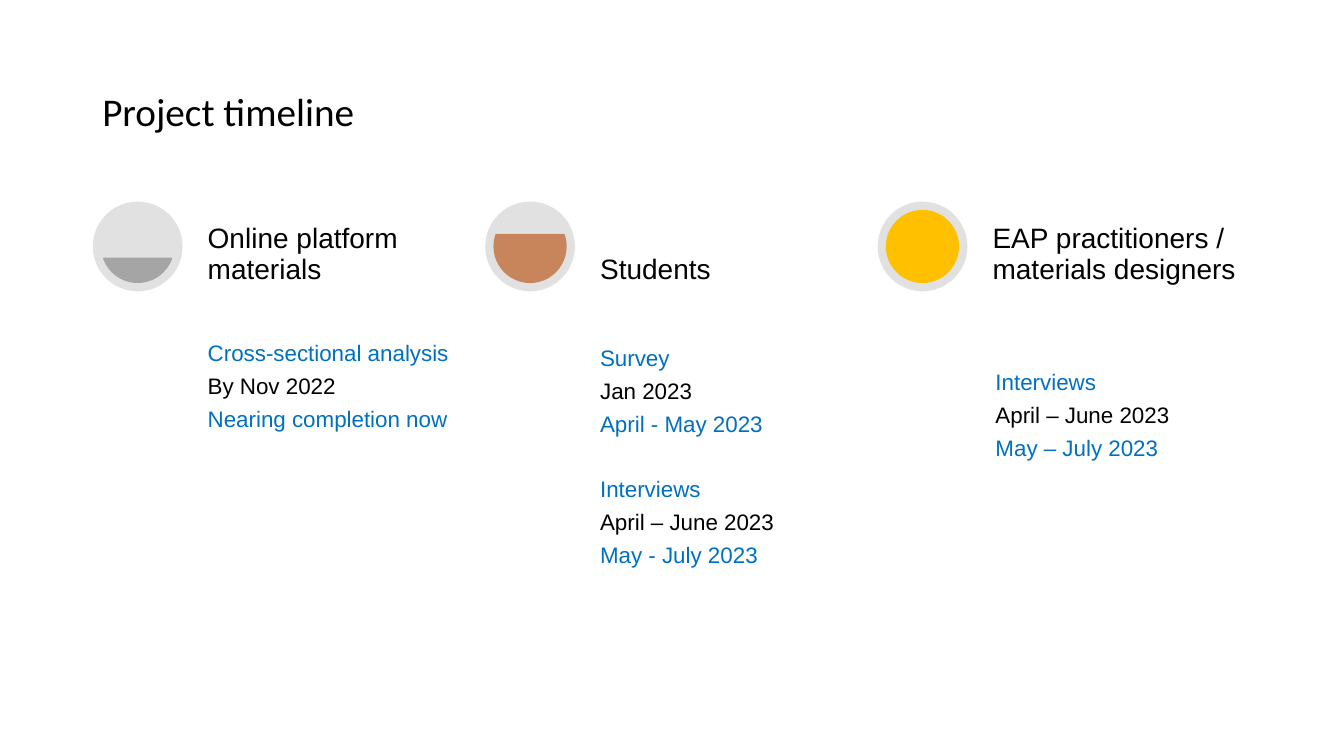
"""Build the project timeline slide."""
import dataclasses

import pptx
import pptx.dml.color
import pptx.enum.shapes
import pptx.enum.text
import pptx.slide
import pptx.text.text
import pptx.util

Pt = pptx.util.Pt
Anchor = pptx.enum.text.MSO_ANCHOR
Shape = pptx.enum.shapes.MSO_SHAPE


@dataclasses.dataclass(frozen=True)
class Theme:
    title_font: str = "Calibri"
    body_font: str = "Arial"
    title_size: float = 28
    heading_size: float = 20
    entry_size: float = 16
    text: str = "000000"
    accent: str = "0070C0"
    ring: str = "E1E1E1"
    low: str = "A5A5A5"
    middle: str = "C8855C"
    full: str = "FFC000"


@dataclasses.dataclass(frozen=True)
class Box:
    left: float
    top: float
    width: float
    height: float

    def lengths(self) -> tuple[pptx.util.Length, ...]:
        return tuple(Pt(value) for value in dataclasses.astuple(self))


@dataclasses.dataclass(frozen=True)
class Activity:
    name: str
    planned: str
    revised: str


@dataclasses.dataclass(frozen=True)
class Stage:
    heading: str
    fill: str
    chord_angles: tuple[float, float]
    activities: tuple[Activity, ...]
    inset: float
    top_inset: float


THEME = Theme()
STAGES = (
    Stage("Online platform materials", THEME.low, (11.68, 96.32),
          (Activity("Cross-sectional analysis", "By Nov 2022", "Nearing completion now"),),
          4.4, 36.5),
    Stage("Students", THEME.middle, (204.32, 119.68),
          (Activity("Survey", "Jan 2023", "April - May 2023"),
           Activity("Interviews", "April – June 2023", "May - July 2023")),
          4.4, 40),
    Stage("EAP practitioners / materials designers", THEME.full, (162, 162),
          (Activity("Interviews", "April – June 2023", "May – July 2023"),),
          6.5, 57),
)
FIRST_LEFT, STAGE_PITCH = 66.3, 280.3
ROW_TOP, RING_SIZE, CHORD_INSET = 144, 64.1, 6.4
TEXT_OFFSET, TEXT_WIDTH, ENTRIES_HEIGHT = 77.7, 189.4, 269.3
ENTRY_GAP, ACTIVITY_GAP = 6.3, 29.1


def rgb(color: str) -> pptx.dml.color.RGBColor:
    return pptx.dml.color.RGBColor.from_string(color)


def add_text(slide: pptx.slide.Slide, box: Box, text: str, font: str, size: float,
             anchor: Anchor, inset: float) -> pptx.text.text.TextFrame:
    text_frame = slide.shapes.add_textbox(*box.lengths()).text_frame
    text_frame.word_wrap = True
    text_frame.vertical_anchor = anchor
    text_frame.margin_left = text_frame.margin_right = Pt(inset)
    text_frame.margin_top = text_frame.margin_bottom = Pt(inset)
    text_frame.text = text
    for paragraph in text_frame.paragraphs:
        paragraph.line_spacing = 0.9
        for run in paragraph.runs:
            run.font.name = font
            run.font.size = Pt(size)
            run.font.color.rgb = rgb(THEME.text)
    return text_frame


def add_disc(slide: pptx.slide.Slide, kind: Shape, box: Box, color: str,
             angles: tuple[float, ...] = ()) -> None:
    shape = slide.shapes.add_shape(kind, *box.lengths())
    shape.shadow.inherit = False
    shape.fill.solid()
    shape.fill.fore_color.rgb = rgb(color)
    if angles:
        shape.line.color.rgb = rgb(color)
        shape.line.width = Pt(1)
    else:
        shape.line.fill.background()
    for index, angle in enumerate(angles):
        shape.adjustments[index] = angle


def add_entries(slide: pptx.slide.Slide, stage: Stage, left: float) -> None:
    lines = [line for activity in stage.activities for line in dataclasses.astuple(activity)]
    box = Box(left, ROW_TOP + RING_SIZE, TEXT_WIDTH, ENTRIES_HEIGHT)
    text_frame = add_text(slide, box, "\n".join(lines), THEME.body_font,
                          THEME.entry_size, Anchor.TOP, stage.inset)
    text_frame.margin_top = Pt(stage.top_inset)
    for index, paragraph in enumerate(text_frame.paragraphs):
        position = index % 3
        paragraph.space_after = Pt(ACTIVITY_GAP if position == 2 else ENTRY_GAP)
        if position != 1:
            paragraph.runs[0].font.color.rgb = rgb(THEME.accent)


def add_stage(slide: pptx.slide.Slide, stage: Stage, left: float) -> None:
    chord_size = RING_SIZE - 2 * CHORD_INSET
    add_disc(slide, Shape.OVAL, Box(left, ROW_TOP, RING_SIZE, RING_SIZE), THEME.ring)
    add_disc(slide, Shape.CHORD,
             Box(left + CHORD_INSET, ROW_TOP + CHORD_INSET, chord_size, chord_size),
             stage.fill, stage.chord_angles)
    text_left = left + TEXT_OFFSET
    add_entries(slide, stage, text_left)
    add_text(slide, Box(text_left, ROW_TOP, TEXT_WIDTH, RING_SIZE), stage.heading,
             THEME.body_font, THEME.heading_size, Anchor.BOTTOM, 4.4)


def main() -> None:
    presentation = pptx.Presentation()
    presentation.slide_width, presentation.slide_height = Pt(960), Pt(540)
    slide = presentation.slides.add_slide(presentation.slide_layouts[6])
    add_text(slide, Box(66, 28.8, 828, 104.4), "Project timeline",
             THEME.title_font, THEME.title_size, Anchor.MIDDLE, 7.2)
    for index, stage in enumerate(STAGES):
        add_stage(slide, stage, FIRST_LEFT + index * STAGE_PITCH)
    presentation.save("out.pptx")


if __name__ == "__main__":
    main()
